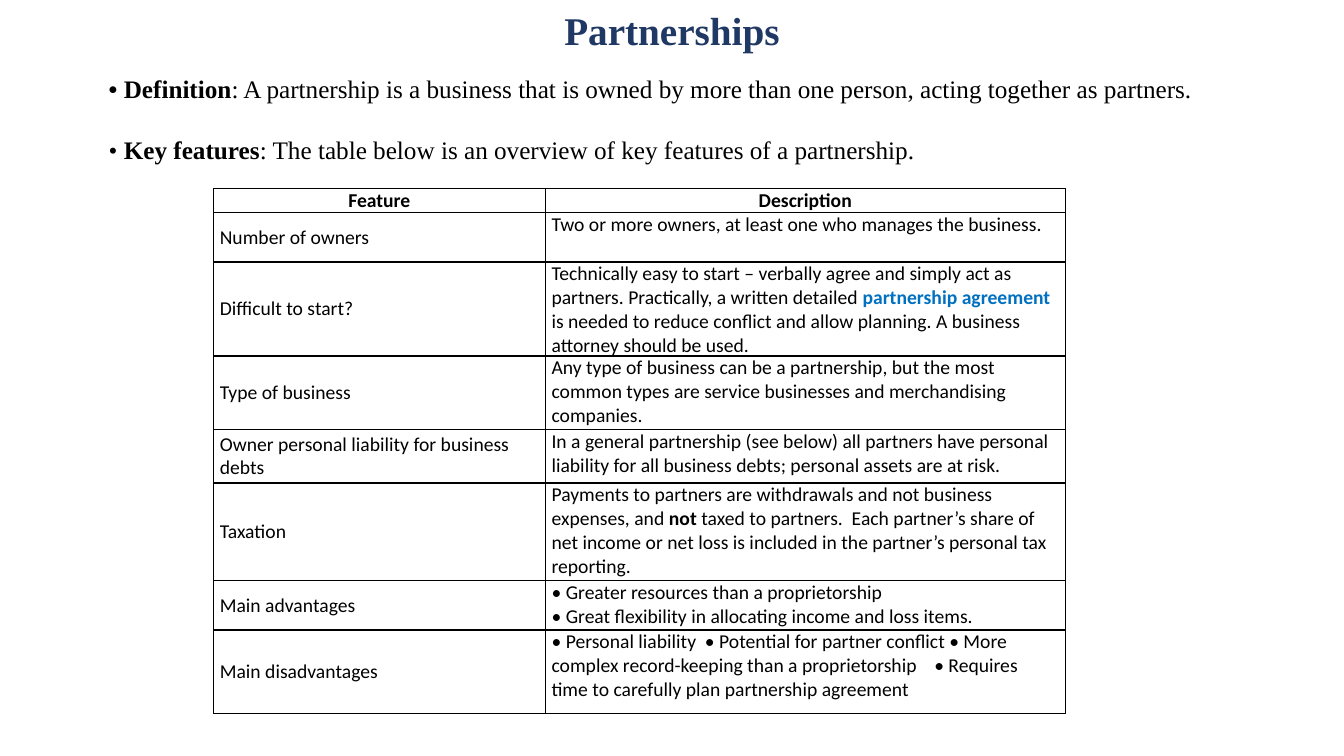
from lxml import etree
from pptx import Presentation
from pptx import util as u
from pptx.dml.color import RGBColor
from pptx.enum import text
from pptx.oxml import ns

BLACK, NAVY, BLUE = "000000", "203864", "0070C0"
SERIF, SANS = "Times New Roman", "Calibri"


def color(value):
    return RGBColor.from_string(value)


class Page:
    def __init__(self, deck):
        self.page = deck.slides.add_slide(deck.slide_layouts[6])

    def fill_paragraph(self, para, spans, font, size, align=text.PP_ALIGN.LEFT):
        para.alignment = align
        for words, bold, tint in spans:
            span = para.add_run()
            span.text = words
            span.font.name = font
            span.font.size = u.Pt(size)
            span.font.bold = bold
            span.font.color.rgb = color(tint)

    def text_box(self, place, paragraphs, size, align=text.PP_ALIGN.LEFT, wrap=True, gap=0):
        box = self.page.shapes.add_textbox(*(u.Cm(length) for length in place))
        frame = box.text_frame
        frame.word_wrap = wrap
        frame.auto_size = text.MSO_AUTO_SIZE.SHAPE_TO_FIT_TEXT
        for index, spans in enumerate(paragraphs):
            para = frame.add_paragraph() if index else frame.paragraphs[0]
            para.space_before = u.Pt(gap if index else 0)
            self.fill_paragraph(para, spans, SERIF, size, align)

    def border(self, cell):
        properties = cell._tc.get_or_add_tcPr()
        for index, side in enumerate(("lnL", "lnR", "lnT", "lnB")):
            line = etree.Element(ns.qn(f"a:{side}"), w=str(u.Pt(1)))
            fill = etree.SubElement(line, ns.qn("a:solidFill"))
            etree.SubElement(fill, ns.qn("a:srgbClr"), val=BLACK)
            properties.insert(index, line)

    def table(self, place, widths, heights, rows):
        left, top = place
        frame = self.page.shapes.add_table(
            len(rows), len(widths), u.Cm(left), u.Cm(top),
            u.Cm(sum(widths)), u.Cm(sum(heights)))
        table = frame.table
        table.first_row = table.horz_banding = False
        for column, width in zip(table.columns, widths):
            column.width = u.Cm(width)
        for row, height in zip(table.rows, heights):
            row.height = u.Cm(height)
        for r, row in enumerate(rows):
            for c, paragraphs in enumerate(row):
                cell = table.cell(r, c)
                cell.margin_left = cell.margin_right = u.Cm(0.16)
                cell.margin_top = cell.margin_bottom = 0
                cell.vertical_anchor = text.MSO_ANCHOR.TOP if c else text.MSO_ANCHOR.MIDDLE
                cell.fill.background()
                self.border(cell)
                align = text.PP_ALIGN.LEFT if r else text.PP_ALIGN.CENTER
                for index, spans in enumerate(paragraphs):
                    para = cell.text_frame.add_paragraph() if index else cell.text_frame.paragraphs[0]
                    self.fill_paragraph(para, spans, SANS, 14, align)


def plain(words):
    return (words, False, BLACK)


def bold(words, tint=BLACK):
    return (words, True, tint)


FEATURES = [
    ("Number of owners", [[plain("Two or more owners, at least one who manages the business.")]]),
    ("Difficult to start?", [[
        plain("Technically easy to start – verbally agree and simply act as partners. "
              "Practically, a written detailed "),
        bold("partnership agreement ", BLUE),
        plain("is needed to reduce conflict and allow planning. "
              "A business attorney should be used.")]]),
    ("Type of business", [[
        plain("Any type of business can be a partnership, but the most common types are "
              "service businesses and merchandising companies.")]]),
    ("Owner personal liability for business debts", [[
        plain("In a general partnership (see below) all partners have personal liability "
              "for all business debts; personal assets are at risk.")]]),
    ("Taxation", [[
        plain("Payments to partners are withdrawals and not business expenses, and "),
        bold("not"),
        plain(" taxed to partners.  Each partner’s share of net income or net loss is "
              "included in the partner’s personal tax reporting.")]]),
    ("Main advantages", [
        [plain("• Greater resources than a proprietorship")],
        [plain("• Great flexibility in allocating income and loss items.")]]),
    ("Main disadvantages", [[
        plain("• Personal liability  • Potential for partner conflict • More complex "
              "record-keeping than a proprietorship    • Requires time to carefully plan "
              "partnership agreement")]]),
]


def main():
    deck = Presentation()
    deck.slide_width, deck.slide_height = u.Cm(33.87), u.Cm(19.05)
    page = Page(deck)
    page.text_box((13.94, 0.03, 5.99, 1.45), [[bold("Partnerships", NAVY)]], 28,
                  text.PP_ALIGN.CENTER, wrap=False)
    page.text_box((2.49, 1.73, 28.88, 2.57), [
        [bold("• Definition"),
         plain(": A partnership is a business that is owned by more than one person, "
               "acting together as partners.")],
        [plain("• "), bold("Key features"),
         plain(": The table below is an overview of key features of a partnership.")],
    ], 18, gap=22)
    header = [[[bold("Feature")]], [[bold("Description")]]]
    rows = [header] + [[[[plain(name)]], details] for name, details in FEATURES]
    page.table((5.38, 4.75), (8.36, 13.11),
               (0.61, 1.24, 2.36, 1.85, 1.35, 2.46, 1.24, 2.11), rows)
    deck.save("out.pptx")


if __name__ == "__main__":
    main()
